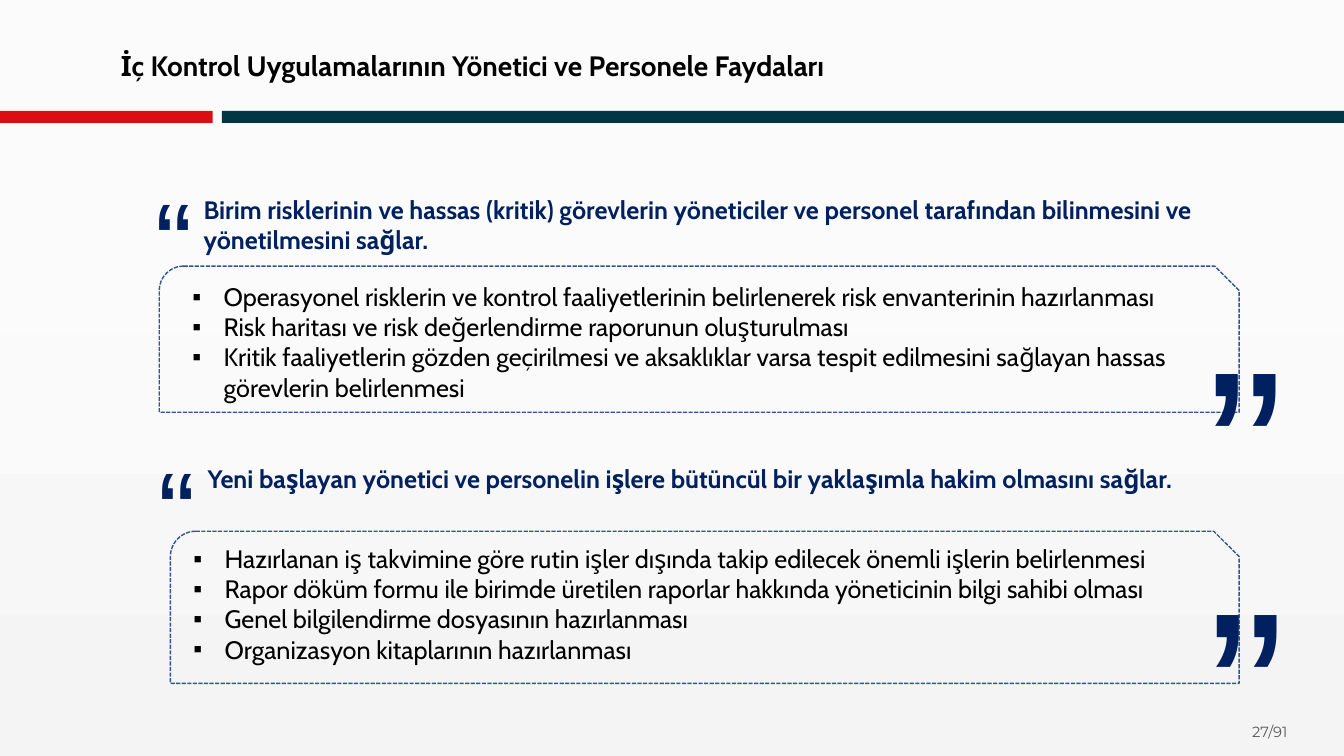
from copy import deepcopy
from dataclasses import dataclass

from lxml.etree import SubElement
from pptx import Presentation
from pptx.dml.color import RGBColor
from pptx.enum.dml import MSO_LINE
from pptx.enum.shapes import MSO_SHAPE
from pptx.oxml.ns import qn
from pptx.util import Inches, Pt


@dataclass(frozen=True)
class Theme:
    black: str = "000000"
    navy: str = "002060"
    red: str = "DC0C15"
    teal: str = "003546"
    frame: str = "325491"
    grey: str = "595959"
    backdrop: tuple = ((0, "FBFBFB"), (0.44, "FAFAFA"), (1, "F4F4F4"))
    body_font: str = "Cabin"
    quote_font: str = "Arial"
    number_font: str = "Montserrat"
    title_size: float = 20
    body_size: float = 18
    number_size: float = 10.5
    open_size: float = 80
    close_size: float = 166


def format_text(paragraph, text, *, font, size, color, bold=False):
    run = paragraph.add_run()
    run.text = text
    run.font.name = font
    run.font.size = Pt(size)
    run.font.bold = bold
    run.font.color.rgb = RGBColor.from_string(color)


class SlideBuilder:
    def __init__(self, slide, theme):
        self.slide = slide
        self.theme = theme

    def backdrop(self):
        fill = self.slide.background.fill
        fill.gradient()
        fill.gradient_angle = 270
        stop_list = next(self.slide.element.iter(qn("a:gsLst")))
        stop_list.insert(1, deepcopy(stop_list[0]))
        for stop, (position, color) in zip(fill.gradient_stops, self.theme.backdrop):
            stop.position = position
            stop.color.rgb = RGBColor.from_string(color)

    def bar(self, left, width, color):
        bar = self.slide.shapes.add_shape(
            MSO_SHAPE.RECTANGLE, Inches(left), Inches(1.1), Inches(width), Inches(0.12))
        bar.shadow.inherit = False
        bar.fill.solid()
        bar.fill.fore_color.rgb = RGBColor.from_string(color)
        bar.line.fill.background()

    def frame(self, left, top, width, height):
        frame = self.slide.shapes.add_shape(
            MSO_SHAPE.SNIP_ROUND_RECTANGLE,
            Inches(left), Inches(top), Inches(width), Inches(height))
        frame.shadow.inherit = False
        frame.fill.background()
        frame.line.color.rgb = RGBColor.from_string(self.theme.frame)
        frame.line.width = Pt(1)
        frame.line.dash_style = MSO_LINE.SQUARE_DOT

    def text(self, box, *lines, bullet=None, rotation=0, **style):
        area = self.slide.shapes.add_textbox(*map(Inches, box))
        area.rotation = rotation
        area.text_frame.word_wrap = True
        for index, line in enumerate(lines):
            paragraph = (area.text_frame.add_paragraph() if index
                         else area.text_frame.paragraphs[0])
            if bullet:
                self.bullet(paragraph, bullet)
            format_text(paragraph, line, **style)

    def bullet(self, paragraph, symbol):
        properties = paragraph._p.get_or_add_pPr()
        indent = Inches(0.31)
        properties.set("marL", str(indent))
        properties.set("indent", str(-indent))
        SubElement(properties, qn("a:buFont")).set("typeface", self.theme.quote_font)
        SubElement(properties, qn("a:buChar")).set("char", symbol)

    def heading(self, box, line):
        self.text(box, line, font=self.theme.body_font, size=self.theme.body_size,
                  color=self.theme.navy, bold=True)

    def bullets(self, box, lines):
        self.text(box, *lines, bullet="▪", font=self.theme.body_font,
                  size=self.theme.body_size, color=self.theme.black)

    def quote_mark(self, box, size, rotation=0):
        self.text(box, "“", rotation=rotation, font=self.theme.quote_font,
                  size=size, color=self.theme.navy)


BENEFITS = [
    {
        "heading": "Birim risklerinin ve hassas (kritik) görevlerin yöneticiler ve "
                   "personel tarafından bilinmesini ve yönetilmesini sağlar.",
        "points": [
            "Operasyonel risklerin ve kontrol faaliyetlerinin belirlenerek risk "
            "envanterinin hazırlanması",
            "Risk haritası ve risk değerlendirme raporunun oluşturulması",
            "Kritik faaliyetlerin gözden geçirilmesi ve aksaklıklar varsa tespit "
            "edilmesini sağlayan hassas görevlerin belirlenmesi",
        ],
        "heading_box": (1.92, 1.88, 10.49, 0.71),
        "points_box": (1.81, 2.74, 10.49, 1.31),
        "frame_box": (1.58, 2.64, 10.71, 1.45),
        "open_box": (1.44, 1.64, 0.7, 1.45),
        "close_box": (12.14, 2.11, 0.7, 2.89),
    },
    {
        "heading": "Yeni başlayan yönetici ve personelin işlere bütüncül bir "
                   "yaklaşımla hakim olmasını sağlar.",
        "points": [
            "Hazırlanan iş takvimine göre rutin işler dışında takip edilecek önemli "
            "işlerin belirlenmesi",
            "Rapor döküm formu ile birimde üretilen raporlar hakkında yöneticinin "
            "bilgi sahibi olması",
            "Genel bilgilendirme dosyasının hazırlanması",
            "Organizasyon kitaplarının hazırlanması",
        ],
        "heading_box": (1.96, 4.55, 10.49, 0.4),
        "points_box": (1.82, 5.34, 10.49, 1.62),
        "frame_box": (1.69, 5.27, 10.6, 1.51),
        "open_box": (1.47, 4.31, 0.7, 1.45),
        "close_box": (12.15, 4.5, 0.7, 2.89),
    },
]


def main():
    deck = Presentation()
    deck.slide_width, deck.slide_height = Inches(13.33), Inches(7.5)
    theme = Theme()
    builder = SlideBuilder(deck.slides.add_slide(deck.slide_layouts[6]), theme)

    # Background, page number and header bars
    builder.backdrop()
    builder.text((12.32, 7.12, 0.9, 0.4), "27/91", font=theme.number_font,
                 size=theme.number_size, color=theme.grey)
    builder.bar(0, 2.11, theme.red)
    builder.bar(2.2, 11.13, theme.teal)

    # Title
    builder.text((1.1, 0.43, 10.7, 0.34),
                 "İç Kontrol Uygulamalarının Yönetici ve Personele Faydaları",
                 font=theme.body_font, size=theme.title_size,
                 color=theme.black, bold=True)

    # Quoted benefits with their framed points
    for benefit in BENEFITS:
        builder.bullets(benefit["points_box"], benefit["points"])
        builder.heading(benefit["heading_box"], benefit["heading"])
        builder.frame(*benefit["frame_box"])
        builder.quote_mark(benefit["open_box"], theme.open_size)
        builder.quote_mark(benefit["close_box"], theme.close_size, rotation=180)

    deck.save("out.pptx")


if __name__ == "__main__":
    main()
